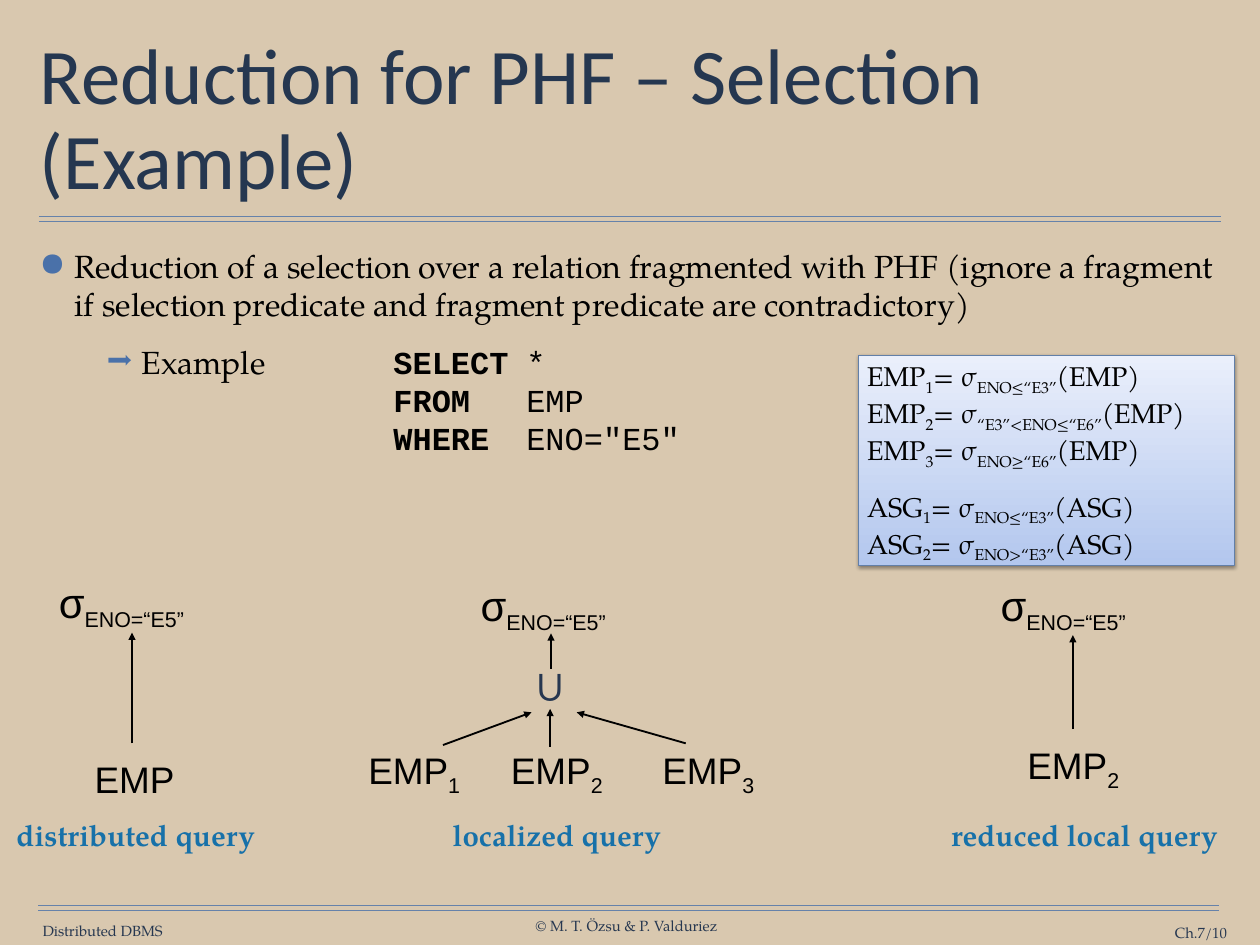
from lxml import etree
from pptx import Presentation
from pptx.dml.color import RGBColor
from pptx.enum.shapes import MSO_CONNECTOR, MSO_SHAPE
from pptx.enum.text import MSO_ANCHOR, MSO_AUTO_SIZE, PP_ALIGN
from pptx.oxml.ns import qn
from pptx.util import Pt

LEFT, CENTER, RIGHT = PP_ALIGN.LEFT, PP_ALIGN.CENTER, PP_ALIGN.RIGHT
TOP, MIDDLE = MSO_ANCHOR.TOP, MSO_ANCHOR.MIDDLE
NO_RESIZE = MSO_AUTO_SIZE.NONE
STRAIGHT = MSO_CONNECTOR.STRAIGHT
RECTANGLE = MSO_SHAPE.RECTANGLE

SERIF, SANS, TITLE_FONT, CODE = "TeX Gyre Pagella", "Arial", "Calibri", "Courier New"
COLORS = {
    "background": "D9C8AF", "rule": "6682AA", "title": "253750", "footer": "263750",
    "text": "000000", "bullet": "4A71A9", "caption": "1771A9",
    "panel_bottom": "B3C7EE", "panel_top": "EAEFFB", "panel_line": "627FA8",
}
NODE_INSETS = (10.08, 5.04)
PLACEHOLDER_INSETS = (4.32, 4.32)


def color(name):
    return RGBColor.from_string(COLORS[name])


def add_element(parent, tag, **attributes):
    element = etree.SubElement(parent, qn(tag))
    for name, value in attributes.items():
        element.set(name, str(value))
    return element


class SlideBuilder:
    def __init__(self, slide):
        self.slide = slide
        slide.background.fill.solid()
        slide.background.fill.fore_color.rgb = color("background")

    def place(self, shape, box):
        shape.left, shape.top, shape.width, shape.height = map(Pt, box)

    def frame(self, shape, insets, anchor=TOP, wrap=True):
        text_frame = shape.text_frame
        text_frame.auto_size = NO_RESIZE
        text_frame.word_wrap = wrap
        text_frame.vertical_anchor = anchor
        text_frame.margin_left = text_frame.margin_right = Pt(insets[0])
        text_frame.margin_top = text_frame.margin_bottom = Pt(insets[1])
        return text_frame

    def add_runs(self, paragraph, markup, font, size, ink="text", align=LEFT,
                 bold=False, marked="subscript"):
        """Every second part between bars is subscript or bold."""
        paragraph.alignment = align
        for index, part in enumerate(markup.split("|")):
            for line_index, line in enumerate(part.split("\n")):
                if line_index:
                    paragraph.add_line_break()
                if not line:
                    continue
                run = paragraph.add_run()
                run.text = line
                run.font.name, run.font.size = font, Pt(size)
                run.font.color.rgb = color(ink)
                is_marked = index % 2 == 1
                run.font.bold = bold or (is_marked and marked == "bold")
                if is_marked and marked == "subscript":
                    run._r.get_or_add_rPr().set("baseline", "-25000")

    def text(self, box, markup, font, size, ink="text", align=CENTER, insets=(0, 0),
             anchor=TOP, wrap=False, bold=False):
        shape = self.slide.shapes.add_textbox(*map(Pt, box))
        paragraph = self.frame(shape, insets, anchor, wrap).paragraphs[0]
        self.add_runs(paragraph, markup, font, size, ink, align, bold)
        return paragraph

    def node(self, box, markup):
        return self.text(box, markup, SANS, 30, insets=NODE_INSETS)

    def selection(self, left, top):
        paragraph = self.node((left, top, 134.6, 51.1), "σ|ENO=“E5” |")
        paragraph.runs[0].font.size = Pt(34)

    def line(self, start, end, ink="text", width=1.5, arrow=True):
        connector = self.slide.shapes.add_connector(STRAIGHT, *map(Pt, start + end))
        connector.line.color.rgb = color(ink)
        connector.line.width = Pt(width)
        if arrow:
            add_element(connector.line._get_or_add_ln(), "a:tailEnd", type="triangle")
        add_element(connector._element.spPr, "a:effectLst")

    def title(self, box, content):
        shape = self.slide.shapes.title
        self.place(shape, box)
        paragraph = self.frame(shape, PLACEHOLDER_INSETS, MIDDLE).paragraphs[0]
        paragraph.line_spacing = 0.9
        self.add_runs(paragraph, content, TITLE_FONT, 64, "title")

    def bullet(self, paragraph, level, character, percent, margin):
        paragraph.level = level
        properties = paragraph._p.get_or_add_pPr()
        properties.set("marL", str(Pt(margin)))
        properties.set("indent", str(Pt(-28.8)))
        bullet_color = add_element(properties, "a:buClr")
        add_element(bullet_color, "a:srgbClr", val=COLORS["bullet"])
        add_element(properties, "a:buSzPct", val=percent * 1000)
        add_element(properties, "a:buFont", typeface=SERIF)
        add_element(properties, "a:buChar", char=character)
        tabs = add_element(properties, "a:tabLst")
        add_element(tabs, "a:tab", pos=Pt(256.3), algn="l")
        paragraph.space_before = Pt(15.6 if level else 0)

    def body(self, box, statement, query):
        shape = self.slide.placeholders[1]
        self.place(shape, box)
        text_frame = self.frame(shape, PLACEHOLDER_INSETS)
        first, second = text_frame.paragraphs[0], text_frame.add_paragraph()
        self.bullet(first, 0, "•", 150, 28.8)
        self.add_runs(first, statement, SERIF, 26)
        self.bullet(second, 1, "➡", 85, 83.5)
        self.add_runs(second, query, CODE, 26, marked="bold")
        second.runs[0].font.name = SERIF

    def panel(self, box, groups):
        shape = self.slide.shapes.add_shape(RECTANGLE, *map(Pt, box))
        shape.fill.gradient()
        shape.fill.gradient_angle = 90
        for stop, name in zip(shape.fill.gradient_stops, ("panel_bottom", "panel_top")):
            stop.color.rgb = color(name)
        shape.line.color.rgb = color("panel_line")
        shape.line.width = Pt(0.75)
        shape.shadow.inherit = False
        effects = shape._element.spPr.find(qn("a:effectLst"))
        shadow = add_element(effects, "a:outerShdw", blurRad=Pt(3.1), dist=Pt(1.6),
                             dir=5400000, rotWithShape=0)
        shade = add_element(shadow, "a:srgbClr", val=COLORS["text"])
        add_element(shade, "a:alpha", val=38000)
        text_frame = self.frame(shape, (7.2, 3.6))
        for index, group in enumerate(groups):
            paragraph = text_frame.add_paragraph() if index else text_frame.paragraphs[0]
            paragraph.space_before = Pt(16 if index else 0)
            self.add_runs(paragraph, group, SERIF, 22)


def main():
    presentation = Presentation()
    presentation.slide_width, presentation.slide_height = Pt(1024), Pt(768)
    builder = SlideBuilder(presentation.slides.add_slide(presentation.slide_layouts[1]))

    # Double rules and footer
    for left, right, top in ((31.7, 992.2, 175.7), (31, 990.7, 735.8)):
        for y in (top, top + 4.3):
            builder.line((left, y), (right, y), "rule", 1, arrow=False)
    for box, content, align in (
        ((33.8, 749.5, 99.4, 14.4), "Distributed DBMS", CENTER),
        ((434.2, 745.2, 149.8, 14.4), "© M. T. Özsu & P. Valduriez", CENTER),
        ((886.3, 751, 110.9, 14.4), "Ch.7/10", RIGHT),
    ):
        builder.text(box, content, SERIF, 12, "footer", align, anchor=MIDDLE,
                     wrap=align == RIGHT)

    # Title and list
    builder.title((28.1, 35.3, 967.7, 126.7), "Reduction for PHF – Selection (Example)")
    builder.body(
        (27.4, 195.8, 967.7, 532.8),
        "Reduction of a selection over a relation fragmented with PHF (ignore a fragment "
        "if selection predicate and fragment predicate are contradictory)",
        "Example \t\t|SELECT\t|*\n\t\t|FROM\t|\tEMP\n\t\t|WHERE|\tENO=\"E5\"")

    # Fragment definitions
    builder.panel((697.7, 288.7, 305.3, 170.6), (
        "EMP|1|= σ|ENO≤“E3”|(EMP)\nEMP|2|= σ|“E3”<ENO≤“E6”|(EMP)\n"
        "EMP|3|= σ|ENO≥“E6”|(EMP)",
        "ASG|1|= σ|ENO≤“E3”|(ASG)\nASG|2|= σ|ENO>“E3”|(ASG)"))

    # Query trees
    for left, top in ((33.8, 463.7), (376.6, 465.8), (799.2, 465.8)):
        builder.selection(left, top)
    for left, top, width, relation in (
        (66.2, 609.8, 86.4, "EMP"), (288, 602.6, 97.2, "EMP|1|"),
        (403.9, 602.6, 97.2, "EMP|2|"), (527, 602.6, 97.2, "EMP|3|"),
        (823.7, 598.3, 97.2, "EMP|2|"),
    ):
        builder.node((left, top, width, 46.1), relation)
    union = builder.text((433.4, 536.4, 28.1, 41.8), "∪", SANS, 36, "footer")
    union.line_spacing = Pt(41.2)
    for start, end in (
        ((107.3, 604.1), (107.3, 514.1)), ((447.8, 543.6), (447.8, 514.8)),
        ((360, 605.5), (432, 578.9)), ((447.1, 607), (447.1, 576)),
        ((557.3, 604.1), (468.7, 578.9)), ((871.9, 592.6), (871.9, 516.2)),
    ):
        builder.line(start, end)

    # Captions
    for left, width, caption in (
        (5.8, 208.8, "distributed query"), (360, 185, "localized query"),
        (761, 240.5, "reduced local query"),
    ):
        builder.text((left, 660.2, width, 36), caption, SERIF, 24, "caption",
                     insets=(7.2, 3.6), bold=True)

    presentation.save("out.pptx")


if __name__ == "__main__":
    main()
